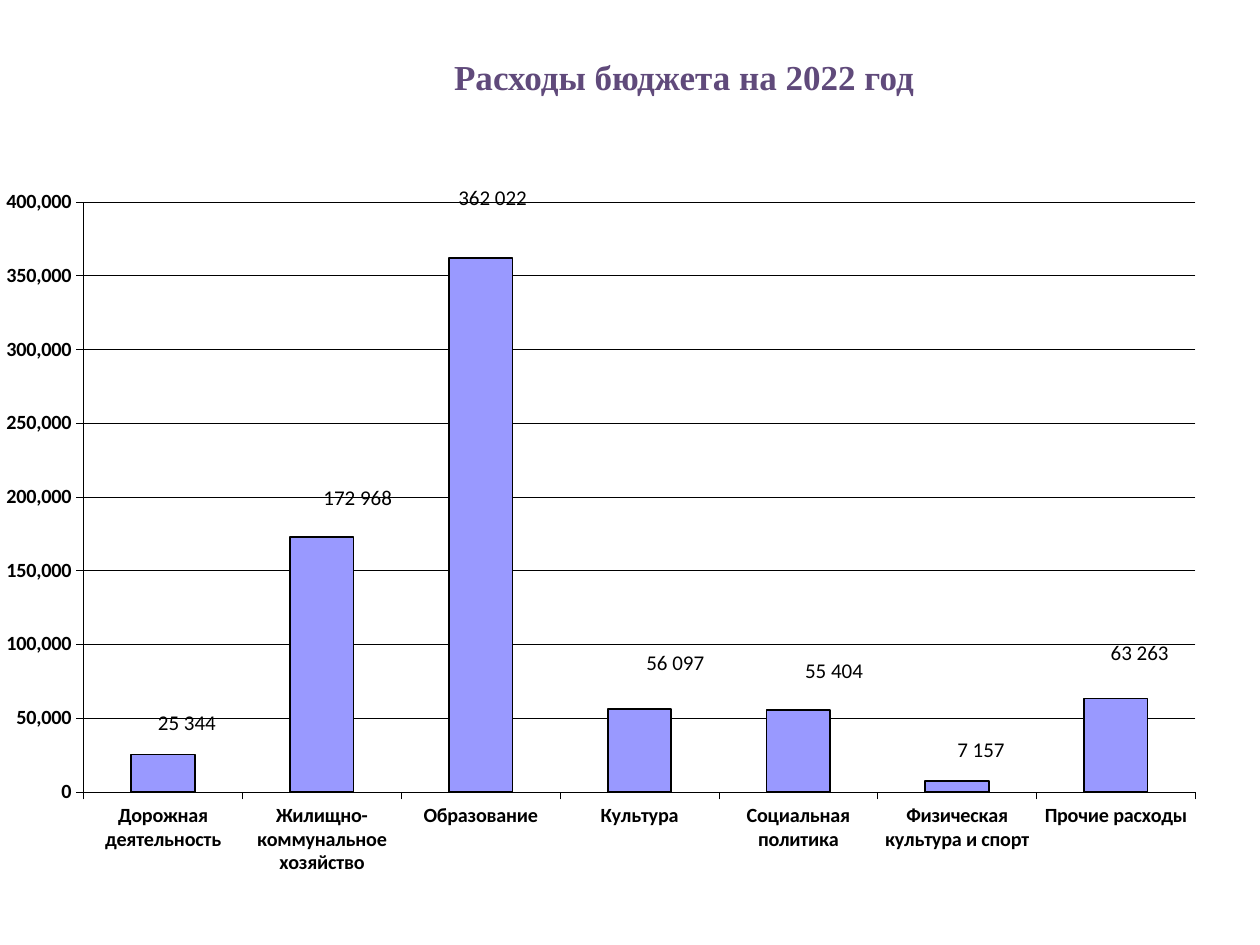
"""Builds the slide with the budget expenses for 2022."""
import dataclasses

import pptx
import pptx.chart.data
import pptx.dml.color
import pptx.enum.chart
import pptx.enum.text
import pptx.oxml
import pptx.oxml.ns
import pptx.util

Cm, Pt = pptx.util.Cm, pptx.util.Pt


@dataclasses.dataclass(frozen=True)
class Theme:
    heading_font: str = "Times New Roman"
    body_font: str = "Calibri"
    heading_color: str = "604A7B"
    ink: str = "000000"
    bar_color: str = "9999FF"
    heading_size: float = 20
    axis_size: float = 11.5
    value_size: float = 12
    hairline: float = 0.25
    outline: float = 1


class BudgetSlide:
    def __init__(self, deck, theme):
        self.theme = theme
        self.slide = deck.slides.add_slide(deck.slide_layouts[5])

    def style_font(self, font, name, size, color, bold):
        font.name, font.size, font.bold = name, Pt(size), bold
        font.color.rgb = pptx.dml.color.RGBColor.from_string(color)

    def style_line(self, line, width):
        line.color.rgb = pptx.dml.color.RGBColor.from_string(self.theme.ink)
        line.width = Pt(width)

    def title(self, wording, left, top, width, height):
        heading = self.slide.shapes.title
        heading.left, heading.top = Cm(left), Cm(top)
        heading.width, heading.height = Cm(width), Cm(height)
        frame = heading.text_frame
        frame.text = wording
        frame.word_wrap = False
        frame.auto_size = pptx.enum.text.MSO_AUTO_SIZE.NONE
        frame.vertical_anchor = pptx.enum.text.MSO_ANCHOR.MIDDLE
        frame.paragraphs[0].alignment = pptx.enum.text.PP_ALIGN.RIGHT
        self.style_font(frame.paragraphs[0].runs[0].font, self.theme.heading_font,
                        self.theme.heading_size, self.theme.heading_color, True)

    def column_chart(self, expenses, left, top, width, height):
        figures = pptx.chart.data.CategoryChartData(number_format="#,##0")
        figures.categories = [expense[0] for expense in expenses]
        figures.add_series("Series 1", [expense[1] for expense in expenses])
        chart = self.slide.shapes.add_chart(
            pptx.enum.chart.XL_CHART_TYPE.COLUMN_CLUSTERED,
            Cm(left), Cm(top), Cm(width), Cm(height), figures).chart
        chart.has_legend = chart.has_title = False
        self.style_font(chart.font, self.theme.body_font,
                        self.theme.axis_size, self.theme.ink, True)
        self.axes(chart)
        plot = chart.plots[0]
        plot.gap_width, plot.vary_by_categories = 150, False
        columns = plot.series[0]
        columns.format.fill.solid()
        columns.format.fill.fore_color.rgb = pptx.dml.color.RGBColor.from_string(
            self.theme.bar_color)
        self.style_line(columns.format.line, self.theme.outline)
        self.value_labels(columns, expenses)
        plot_area = plot._element.getparent()
        for old_layout in plot_area.findall(pptx.oxml.ns.qn("c:layout")):
            plot_area.remove(old_layout)
        plot_area.insert(0, self.layout(
            layoutTarget="inner", xMode="edge", yMode="edge",
            x=0.07, y=0.02, w=0.93, h=0.84))

    def axes(self, chart):
        for axis in (chart.category_axis, chart.value_axis):
            axis.major_tick_mark = pptx.enum.chart.XL_TICK_MARK.OUTSIDE
            axis.minor_tick_mark = pptx.enum.chart.XL_TICK_MARK.NONE
            axis.tick_label_position = pptx.enum.chart.XL_TICK_LABEL_POSITION.LOW
            self.style_line(axis.format.line, self.theme.hairline)
            self.style_font(axis.tick_labels.font, self.theme.body_font,
                            self.theme.axis_size, self.theme.ink, True)
            body = axis._element.find(".//" + pptx.oxml.ns.qn("a:bodyPr"))
            body.set("rot", "0")
            body.set("vert", "horz")
        scale = chart.value_axis
        scale.minimum_scale, scale.maximum_scale, scale.major_unit = 0, 400000, 50000
        scale.tick_labels.number_format = "#,##0"
        scale.tick_labels.number_format_is_linked = False
        self.style_line(scale.major_gridlines.format.line, self.theme.hairline)

    def value_labels(self, columns, expenses):
        labels = columns.data_labels
        labels.show_value = True
        labels.number_format, labels.number_format_is_linked = "#,##0", False
        self.style_font(labels.font, self.theme.body_font,
                        self.theme.value_size, self.theme.ink, True)
        for point, (_, amount, right, up) in zip(columns.points, expenses):
            self.value_label(point.data_label, amount, right, up)
        self.hide_leader_lines(labels._element)

    def hide_leader_lines(self, labels):
        for leader in labels.findall(pptx.oxml.ns.qn("c:showLeaderLines")):
            leader.set("val", "0")
        labels.append(pptx.oxml.parse_xml(
            f'<c:extLst {pptx.oxml.ns.nsdecls("c")}>'
            '<c:ext uri="{CE6537A1-D6FC-4f65-9D91-7224C49458BB}" '
            'xmlns:c15="http://schemas.microsoft.com/office/drawing/2012/chart">'
            '<c15:showLeaderLines val="0"/></c:ext></c:extLst>'))

    def value_label(self, label, amount, right, up):
        frame = label.text_frame
        frame.text = f"{amount:,}".replace(",", " ")
        self.style_font(frame.paragraphs[0].runs[0].font, self.theme.body_font,
                        self.theme.value_size, self.theme.ink, False)
        label.position = pptx.enum.chart.XL_LABEL_POSITION.OUTSIDE_END
        rich_text = frame._txBody.getparent()
        rich_text.addprevious(self.layout(x=right, y=-up))

    def layout(self, **settings):
        entries = "".join(f'<c:{key} val="{value}"/>' for key, value in settings.items())
        return pptx.oxml.parse_xml(
            f'<c:layout {pptx.oxml.ns.nsdecls("c")}><c:manualLayout>'
            f"{entries}</c:manualLayout></c:layout>")


EXPENSES = [
    ("Дорожная деятельность", 25344, 0.02, 0.02),
    ("Жилищно-коммунальное хозяйство", 172968, 0.03, 0.03),
    ("Образование", 362022, 0.01, 0.06),
    ("Культура", 56097, 0.03, 0.04),
    ("Социальная политика", 55404, 0.03, 0.03),
    ("Физическая культура и спорт", 7157, 0.02, 0.02),
    ("Прочие расходы", 63263, 0.02, 0.04),
]


def main():
    deck = pptx.Presentation()
    deck.slide_width, deck.slide_height = Cm(25.4), Cm(19.05)
    budget = BudgetSlide(deck, Theme())
    budget.title("Расходы бюджета на 2022 год", 1.68, 0.98, 17, 1.12)
    budget.column_chart(EXPENSES, 0, 3.75, 24.1, 14.2)
    deck.save("out.pptx")


if __name__ == "__main__":
    main()
